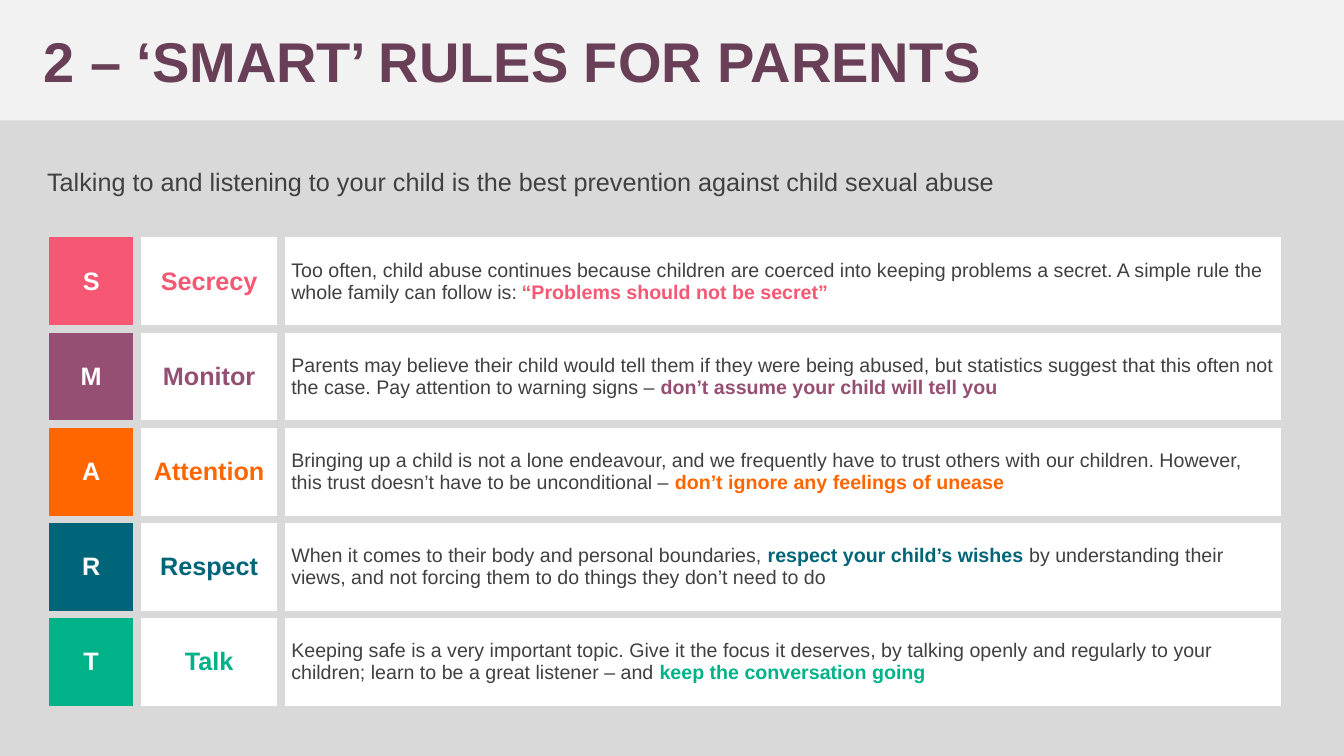
from lxml import etree
from pptx import Presentation
from pptx.dml.color import RGBColor
from pptx.enum import shapes, text
from pptx.oxml import ns
from pptx.util import Pt

COLORS = {
    "background": "D9D9D9", "band": "F2F2F2", "title": "683F56",
    "body": "404040", "white": "FFFFFF",
    "S": "F65772", "M": "954F72", "A": "FF6600", "R": "006579", "T": "00B288",
}
COLUMN_WIDTHS = [65.5, 103, 717.1]
ROW_HEIGHT = 68

# Each rule: word, then its text runs as (wording, highlighted, size)
RULES = [
    ("Secrecy", [
        ("Too often, child abuse continues because children are coerced into keeping "
         "problems a secret. A simple rule the whole family can follow is:", False, 14),
        (" ", False, 11),
        ("“Problems should not be secret”", True, 14)]),
    ("Monitor", [
        ("Parents may believe their child would tell them if they were being abused, but "
         "statistics suggest that this often not the case. Pay attention to warning "
         "signs – ", False, 14),
        ("don’t assume your child will tell you", True, 14)]),
    ("Attention", [
        ("Bringing up a child is not a lone endeavour, and we frequently have to trust "
         "others with our children. However, this trust doesn’t have to be "
         "unconditional – ", False, 14),
        ("don’t ignore any feelings of unease", True, 14)]),
    ("Respect", [
        ("When it comes to their body and personal boundaries, ", False, 14),
        ("respect your child’s wishes ", True, 14),
        ("by understanding their views, and not forcing them to do things they don’t "
         "need to do", False, 14)]),
    ("Talk", [
        ("Keeping safe is a very important topic. Give it the focus it deserves, by "
         "talking openly and regularly to your children; learn to be a great "
         "listener – and ", False, 14),
        ("keep the conversation going", True, 14)]),
]


def write(frame, wording, *, size=18, color="body", bold=False, align=text.PP_ALIGN.LEFT):
    """Append a formatted run to the first paragraph of a text frame."""
    paragraph = frame.paragraphs[0]
    paragraph.alignment = align
    run = paragraph.add_run()
    run.text = wording
    run.font.name = "Arial"
    run.font.size = Pt(size)
    run.font.bold = bold
    run.font.color.rgb = RGBColor.from_string(COLORS[color])


def style_cell(cell, fill):
    """Fill a cell and frame it with borders in the background colour."""
    cell.fill.solid()
    cell.fill.fore_color.rgb = RGBColor.from_string(COLORS[fill])
    cell.vertical_anchor = text.MSO_ANCHOR.MIDDLE
    properties = cell._tc.get_or_add_tcPr()
    for position, side in enumerate(["lnL", "lnR", "lnT", "lnB"]):
        border = etree.Element(ns.qn(f"a:{side}"), w=str(Pt(6)))
        solid = etree.SubElement(border, ns.qn("a:solidFill"))
        etree.SubElement(solid, ns.qn("a:srgbClr"), val=COLORS["background"])
        properties.insert(position, border)


deck = Presentation()
deck.slide_width, deck.slide_height = Pt(960), Pt(540)
slide = deck.slides.add_slide(deck.slide_layouts[6])
slide.background.fill.solid()
slide.background.fill.fore_color.rgb = RGBColor.from_string(COLORS["background"])

# Title band
title_band = slide.shapes.add_shape(
    shapes.MSO_SHAPE.RECTANGLE, Pt(0), Pt(0), Pt(960), Pt(86))
title_band.shadow.inherit = False
title_band.fill.solid()
title_band.fill.fore_color.rgb = RGBColor.from_string(COLORS["band"])
title_band.line.fill.background()
title_band.text_frame.margin_left = Pt(31)
title_band.text_frame.word_wrap = True
title_band.text_frame.vertical_anchor = text.MSO_ANCHOR.MIDDLE
write(title_band.text_frame, "2 – ‘SMART’ RULES FOR PARENTS",
      size=40, color="title", bold=True)

# Table of rules
rules_table = slide.shapes.add_table(
    len(RULES), len(COLUMN_WIDTHS), Pt(32.4), Pt(167),
    Pt(sum(COLUMN_WIDTHS)), Pt(ROW_HEIGHT * len(RULES))).table
rules_table.first_row = rules_table.horz_banding = False
for column, width in zip(rules_table.columns, COLUMN_WIDTHS):
    column.width = Pt(width)

for row, (word, advice) in zip(rules_table.rows, RULES):
    row.height = Pt(ROW_HEIGHT)
    initial = word[0]
    letter_cell, word_cell, advice_cell = row.cells
    for cell, fill in [(letter_cell, initial), (word_cell, "white"), (advice_cell, "white")]:
        style_cell(cell, fill)
    write(letter_cell.text_frame, initial, color="white", bold=True,
          align=text.PP_ALIGN.CENTER)
    write(word_cell.text_frame, word, color=initial, bold=True,
          align=text.PP_ALIGN.CENTER)
    for wording, highlighted, size in advice:
        write(advice_cell.text_frame, wording, size=size, bold=highlighted,
              color=initial if highlighted else "body")

# Introductory sentence
intro = slide.shapes.add_textbox(Pt(26.6), Pt(115.2), Pt(798.5), Pt(29)).text_frame
intro.word_wrap = True
intro.auto_size = text.MSO_AUTO_SIZE.SHAPE_TO_FIT_TEXT
write(intro, "Talking to and listening to your child is the best prevention against "
             "child sexual abuse")

deck.save("out.pptx")
